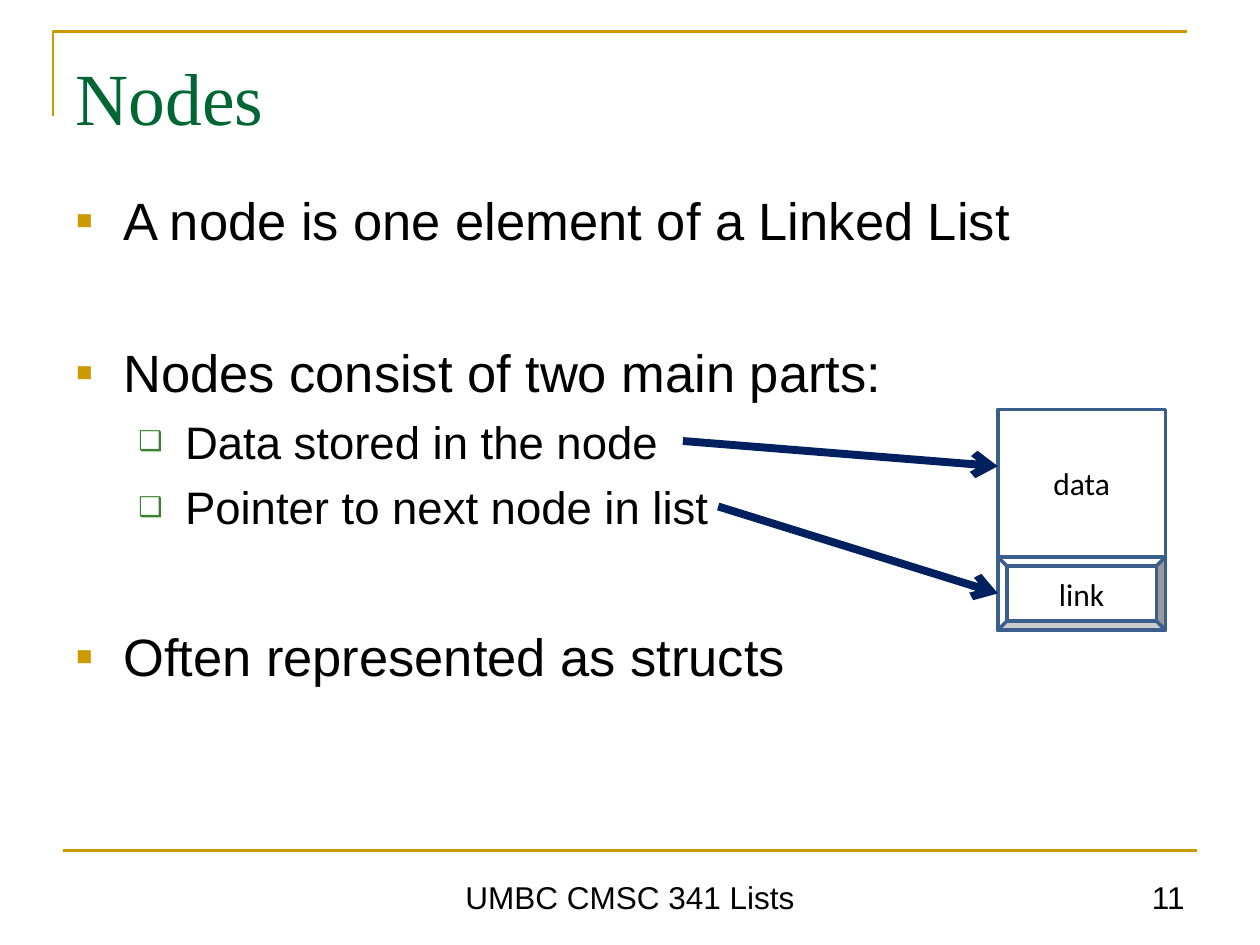
import pptx
import pptx.dml.color
import pptx.enum.shapes
import pptx.enum.text
import pptx.oxml
import pptx.oxml.ns
import pptx.util
from dataclasses import dataclass
from lxml import etree

Inches = pptx.util.Inches
Pt = pptx.util.Pt
Color = pptx.dml.color.RGBColor.from_string
Align = pptx.enum.text.PP_ALIGN
Anchor = pptx.enum.text.MSO_ANCHOR
Shape = pptx.enum.shapes.MSO_SHAPE
STRAIGHT = pptx.enum.shapes.MSO_CONNECTOR.STRAIGHT
qn = pptx.oxml.ns.qn


@dataclass(frozen=True)
class Theme:
    gold: str = "CC9900"
    title: str = "006633"
    sub_bullet: str = "3B812F"
    text: str = "000000"
    paper: str = "FFFFFF"
    node_edge: str = "3A5F8C"
    arrow: str = "002060"
    title_size: int = 42
    point_size: int = 30
    sub_size: int = 26
    small_size: int = 18
    title_font: str = "Times New Roman"
    body_font: str = "Arial"
    node_font: str = "Calibri"


theme = Theme()


def add_span(para, text, size, font, color=theme.text):
    span = para.add_run()
    span.text = text
    span.font.size = Pt(size)
    span.font.name = font
    span.font.color.rgb = Color(color)


def add_line(page, start, end, color, width):
    line = page.shapes.add_connector(STRAIGHT, *map(Inches, start + end))
    line.line.color.rgb = Color(color)
    line.line.width = Pt(width)
    etree.SubElement(line._element.spPr, qn("a:effectLst"))
    return line


deck = pptx.Presentation()
deck.slide_width, deck.slide_height = Inches(10), Inches(7.5)
page = deck.slides.add_slide(deck.slide_layouts[5])

# Gold frame lines
builder = page.shapes.build_freeform(Inches(0.42), Inches(0.92))
builder.add_line_segments(
    [(Inches(0.42), Inches(0.25)), (Inches(9.42), Inches(0.25))], close=False)
corner = builder.convert_to_shape()
corner.shadow.inherit = False
corner.fill.background()
corner.line.color.rgb = Color(theme.gold)
corner.line.width = Pt(1.5)
add_line(page, (0.5, 6.75), (9.5, 6.75), theme.gold, 1.5)

# Title
title = page.shapes.title
title.left, title.top = Inches(0.5), Inches(0.3)
title.width, title.height = Inches(8.99), Inches(1.11)
frame = title.text_frame
frame.word_wrap = True
frame.auto_size = pptx.enum.text.MSO_AUTO_SIZE.NONE
frame.vertical_anchor = Anchor.TOP
frame.margin_top = Inches(0.11)
frame.paragraphs[0].alignment = Align.LEFT
add_span(frame.paragraphs[0], "Nodes", theme.title_size, theme.title_font, theme.title)

# Bullets: level -> left margin, hanging indent, line height, size, mark, mark colour, mark percent
levels = [
    (0.38, 0.38, 37.4, theme.point_size, "▪", theme.gold, 100),
    (0.87, 0.37, 31, theme.sub_size, "❑", theme.sub_bullet, 60),
]
# Text, level, space before
points = [
    ("A node is one element of a Linked List", 0, 0),
    ("Nodes consist of two main parts:", 0, 49.5),
    ("Data stored in the node", 1, 6.5),
    ("Pointer to next node in list", 1, 6.5),
    ("Often represented as structs", 0, 50),
]
body = page.shapes.add_textbox(Inches(0.5), Inches(1.42), Inches(8.99), Inches(5.28))
body.text_frame.word_wrap = True
for index, (text, level, gap) in enumerate(points):
    margin, hanging, line_height, size, mark, mark_color, percent = levels[level]
    para = body.text_frame.paragraphs[0] if index == 0 else body.text_frame.add_paragraph()
    para.level = level
    para.line_spacing = Pt(line_height)
    para.space_before = Pt(gap)
    props = para._p.get_or_add_pPr()
    props.set("marL", str(Inches(margin)))
    props.set("indent", str(-Inches(hanging)))
    color = etree.SubElement(props, qn("a:buClr"))
    etree.SubElement(color, qn("a:srgbClr"), val=mark_color)
    etree.SubElement(props, qn("a:buSzPct"), val=str(percent * 1000))
    etree.SubElement(props, qn("a:buFont"), typeface=theme.body_font)
    etree.SubElement(props, qn("a:buChar"), char=mark)
    add_span(para, text, size, theme.body_font)

# Footer and page number
for left, width, align, text in [
    (1.75, 6.5, Align.CENTER, "UMBC CMSC 341 Lists"),
    (7.17, 2.33, Align.RIGHT, "11"),
]:
    box = page.shapes.add_textbox(Inches(left), Inches(6.83), Inches(width), Inches(0.49))
    box.text_frame.word_wrap = True
    box.text_frame.vertical_anchor = Anchor.BOTTOM
    para = box.text_frame.paragraphs[0]
    para.alignment = align
    add_span(para, text, theme.small_size, theme.body_font)

# Node diagram; the deep bottom margin keeps "data" above the link part
node = page.shapes.add_group_shape()
for kind, top, height, bottom_margin, text in [
    (Shape.RECTANGLE, 3.25, 1.75, 0.64, "data"),
    (Shape.BEVEL, 4.42, 0.58, 0.05, "link"),
]:
    part = node.shapes.add_shape(kind, Inches(7.92), Inches(top), Inches(1.33), Inches(height))
    part.shadow.inherit = False
    part.fill.solid()
    part.fill.fore_color.rgb = Color(theme.paper)
    part.line.color.rgb = Color(theme.node_edge)
    part.line.width = Pt(2)
    part.text_frame.vertical_anchor = Anchor.MIDDLE
    part.text_frame.margin_bottom = Inches(bottom_margin)
    para = part.text_frame.paragraphs[0]
    para.alignment = Align.CENTER
    add_span(para, text, theme.small_size, theme.node_font)

# Arrows from the two parts in the list to the diagram
for start, end in [((5.42, 3.5), (7.92, 3.7)), ((5.7, 4.02), (7.92, 4.71))]:
    arrow = add_line(page, start, end, theme.arrow, 4.5)
    etree.SubElement(arrow.line._get_or_add_ln(), qn("a:tailEnd"), type="arrow")

deck.save("out.pptx")
